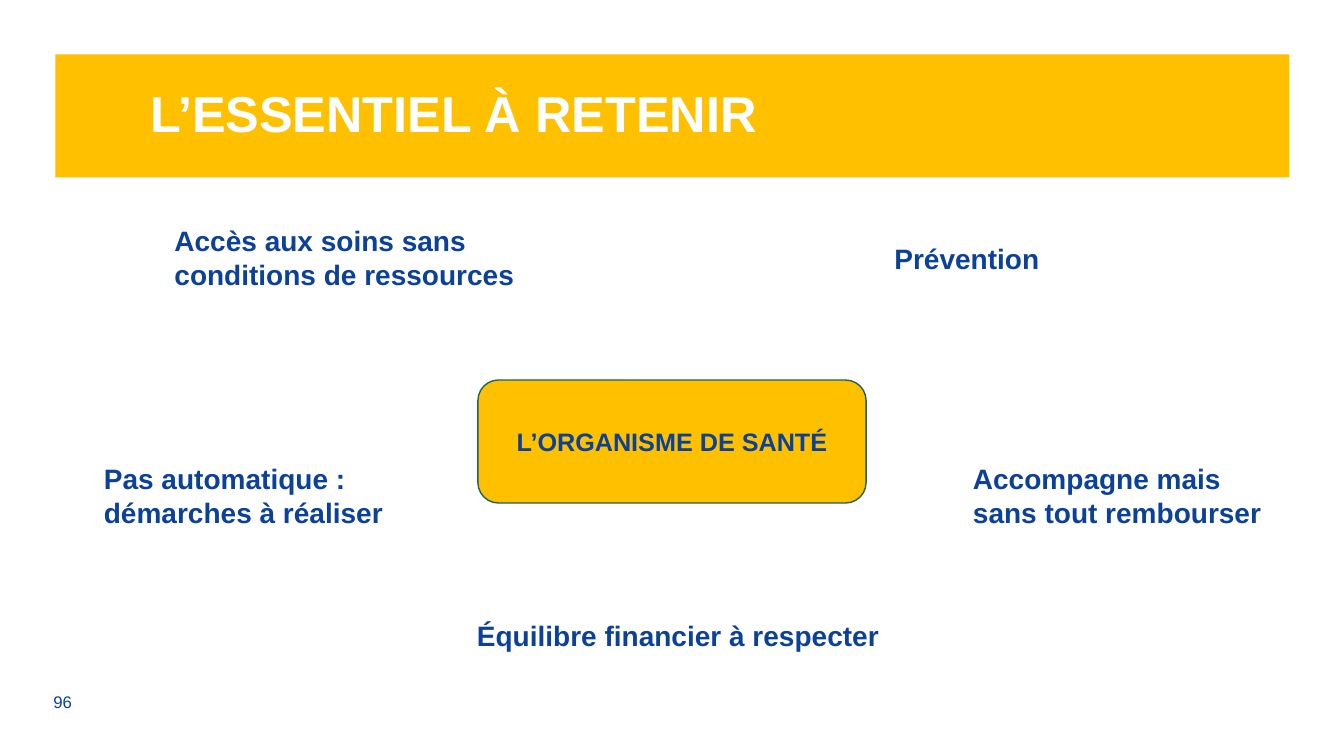
from dataclasses import dataclass

from pptx import Presentation
from pptx.dml.color import RGBColor
from pptx.enum.shapes import MSO_SHAPE
from pptx.enum.text import MSO_ANCHOR, PP_ALIGN
from pptx.shapes.autoshape import Shape
from pptx.slide import Slide
from pptx.util import Inches, Pt

COLORS = {"gold": "FFC000", "blue": "0C419A", "white": "FFFFFF", "teal": "1E6259"}
Insets = tuple[float, float, float, float]
PLAIN: Insets = (0.1, 0.05, 0.1, 0.05)


@dataclass(frozen=True)
class Label:
    text: str
    left: float
    top: float
    width: float
    height: float
    size: int = 20
    color: str = "blue"
    bold: bool = True
    insets: Insets = (0.6, 0.05, 0.1, 0.05)
    anchor: MSO_ANCHOR = MSO_ANCHOR.TOP
    align: PP_ALIGN = PP_ALIGN.LEFT
    before: int = 6
    spacing: float = 1.0


@dataclass(frozen=True)
class Panel:
    label: Label
    kind: MSO_SHAPE
    border: str | None = None


BANNER = Panel(
    Label("L’ESSENTIEL À RETENIR", 0.55, 0.54, 12.24, 1.22, 36, "white",
          insets=(0.94, 0.08, 0.08, 0.08), anchor=MSO_ANCHOR.MIDDLE,
          before=0, spacing=0.9),
    MSO_SHAPE.RECTANGLE,
)
CENTER = Panel(
    Label("L’ORGANISME DE SANTÉ", 4.74, 3.77, 3.85, 1.22, 18, insets=PLAIN,
          anchor=MSO_ANCHOR.MIDDLE, align=PP_ALIGN.CENTER, before=0),
    MSO_SHAPE.ROUNDED_RECTANGLE, "teal",
)
LABELS = (
    Label("Accès aux soins sans conditions de ressources", 1.13, 2.17, 4.18, 1.08),
    Label("Prévention", 8.27, 2.35, 2.75, 0.72),
    Label("Pas automatique : démarches à réaliser", 0.43, 4.53, 3.85, 0.91),
    Label("Accompagne mais sans tout rembourser", 9.05, 4.53, 3.74, 0.91),
    Label("Équilibre financier à respecter", 4.13, 6.09, 4.72, 0.72),
    Label("96", 0.43, 6.81, 0.79, 0.31, 12, bold=False, insets=PLAIN,
          anchor=MSO_ANCHOR.MIDDLE, before=0),
)


def paint(name: str) -> RGBColor:
    return RGBColor.from_string(COLORS[name])


def place(label: Label) -> tuple[int, int, int, int]:
    return (Inches(label.left), Inches(label.top),
            Inches(label.width), Inches(label.height))


def write(shape: Shape, label: Label) -> None:
    frame = shape.text_frame
    frame.word_wrap = True
    frame.vertical_anchor = label.anchor
    (frame.margin_left, frame.margin_top,
     frame.margin_right, frame.margin_bottom) = map(Inches, label.insets)
    line = frame.paragraphs[0]
    line.alignment = label.align
    line.space_before = Pt(label.before)
    line.line_spacing = label.spacing
    run = line.add_run()
    run.text = label.text
    run.font.name = "Arial"
    run.font.size = Pt(label.size)
    run.font.bold = label.bold
    run.font.color.rgb = paint(label.color)


def draw_label(slide: Slide, label: Label) -> None:
    write(slide.shapes.add_textbox(*place(label)), label)


def draw_panel(slide: Slide, panel: Panel) -> None:
    shape = slide.shapes.add_shape(panel.kind, *place(panel.label))
    shape.shadow.inherit = False
    shape.fill.solid()
    shape.fill.fore_color.rgb = paint("gold")
    if panel.border:
        shape.line.color.rgb = paint(panel.border)
        shape.line.width = Pt(1)
    else:
        shape.line.fill.background()
    write(shape, panel.label)


def main() -> None:
    """Build the summary slide on health cover."""
    deck = Presentation()
    deck.slide_width, deck.slide_height = Inches(13.33), Inches(7.5)
    slide = deck.slides.add_slide(deck.slide_layouts[6])
    draw_panel(slide, BANNER)
    for label in LABELS:
        draw_label(slide, label)
    draw_panel(slide, CENTER)
    deck.save("out.pptx")


if __name__ == "__main__":
    main()
